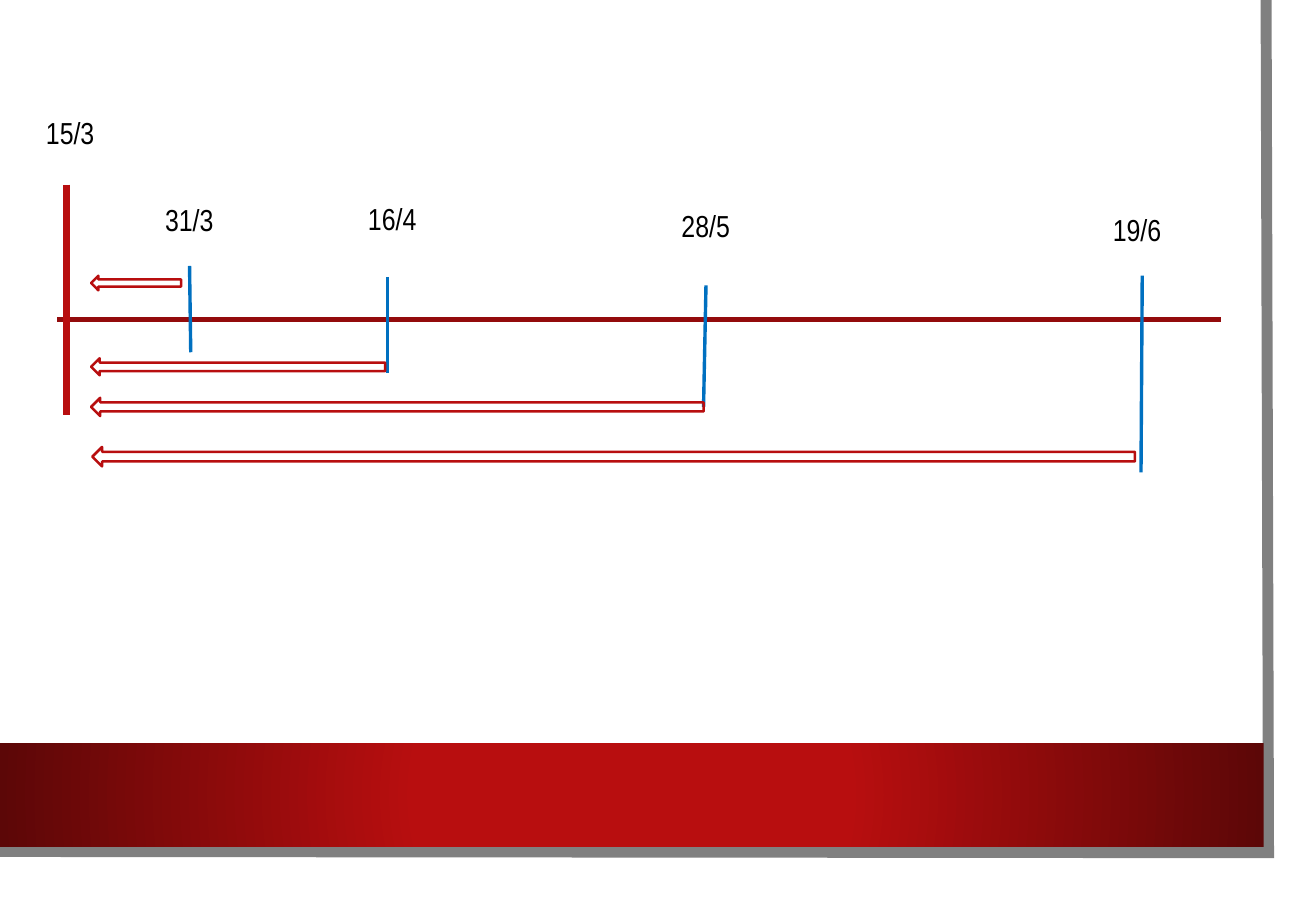
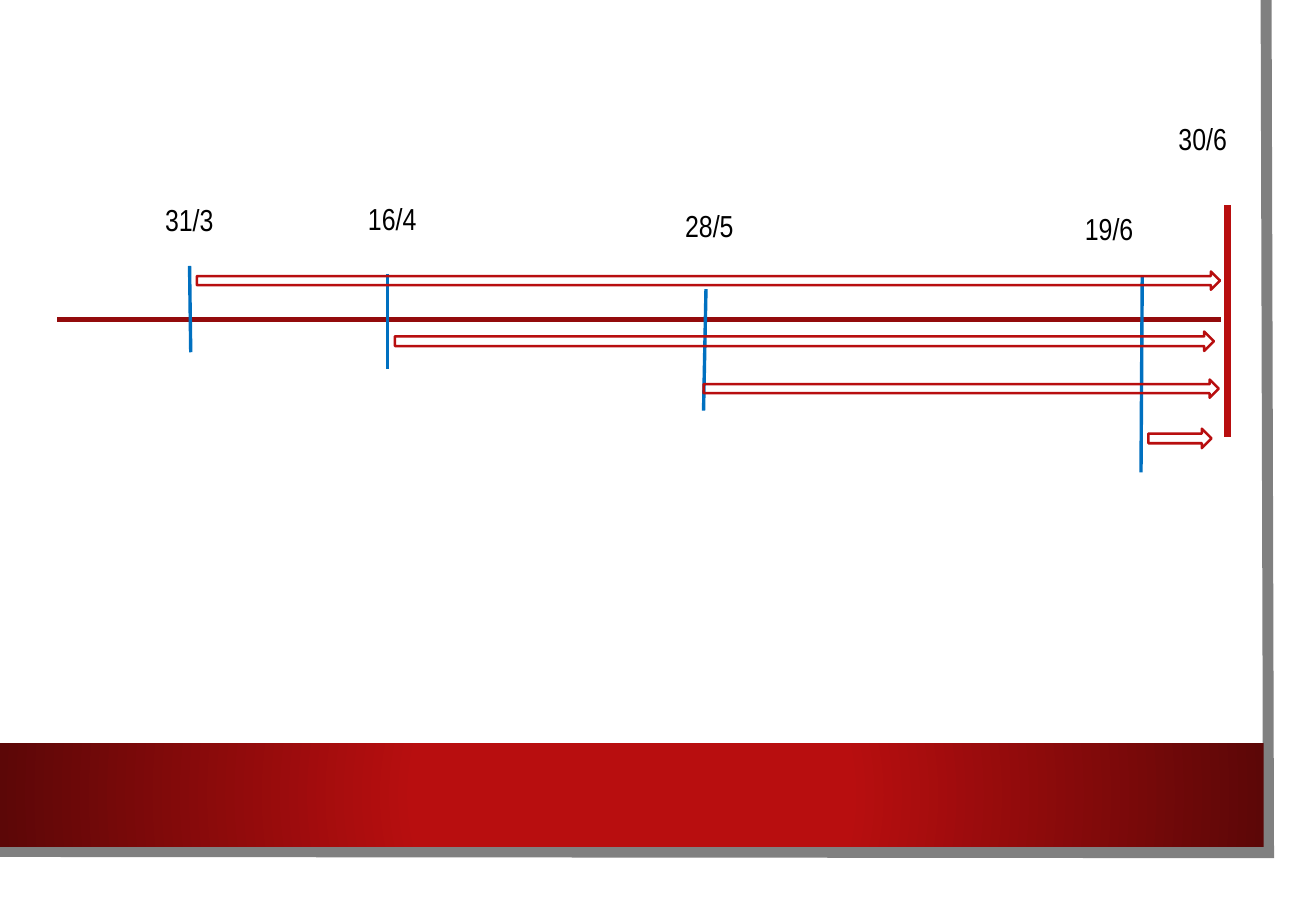
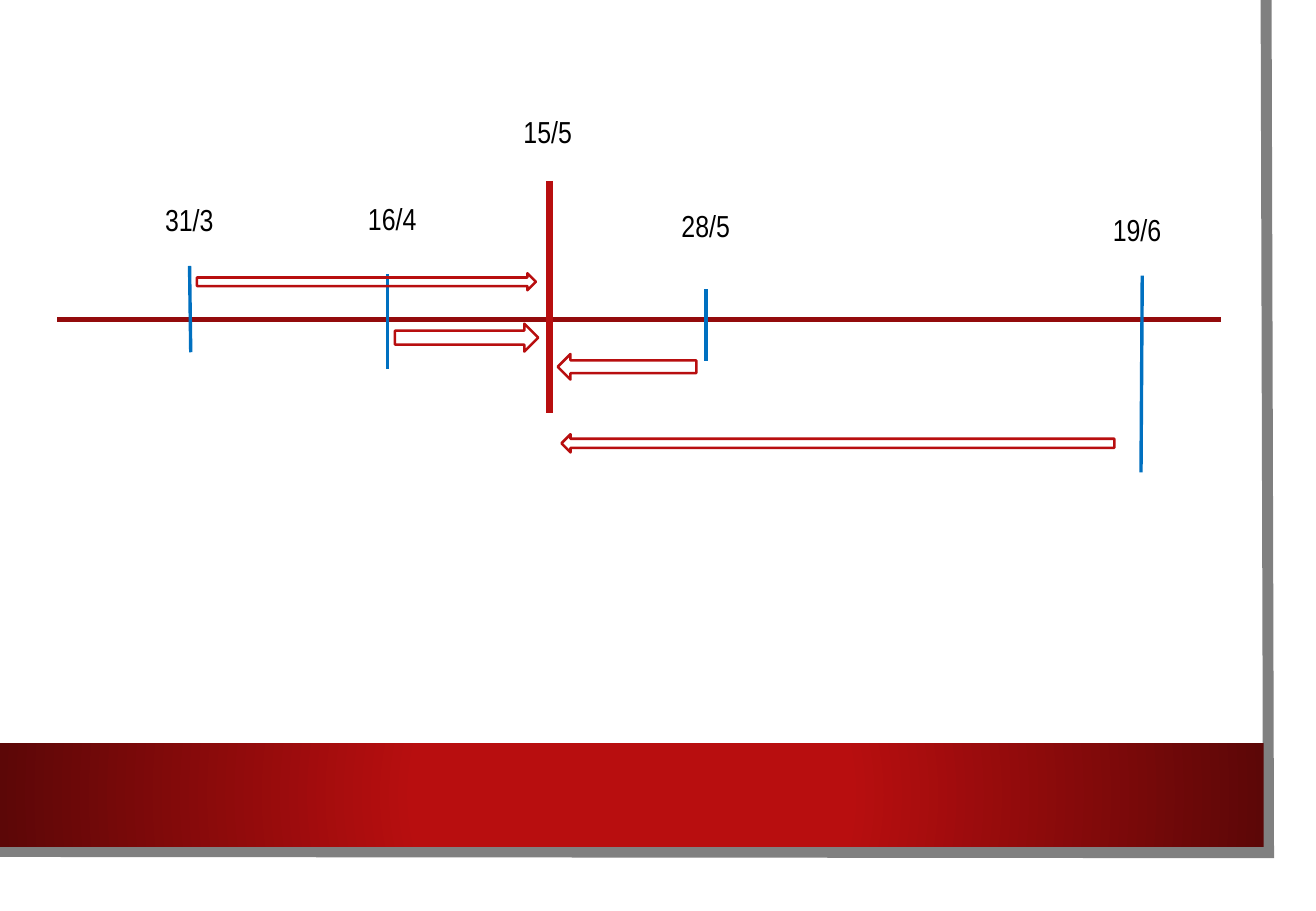
from lxml import etree
from pptx import Presentation
from pptx import util as u
from pptx.dml.color import RGBColor
from pptx.enum import shapes, text
from pptx.oxml import ns

COLORS = {
    "sheet": "FFFFFF",
    "edge": "808080",
    "band": "B80E0F",
    "band_end": "5C0707",
    "axis": "930B0C",
    "event": "0070C0",
    "key": "B80E0F",
    "text": "000000",
}
LABEL_FONT = {"name": "Arial Narrow", "size": u.Pt(18)}
LABEL_SIZE = (0.84, 0.4)
FRAME_BOX = (0, 0, 10.64, 7.27)
TIMELINE_BOX = (0.47, 0.88, 9.58, 3.01)
AXIS_Y = 1.75

# All timeline positions are in inches from the top left of its box.
# Dates: label left and top, then the line's start and end points.
EVENTS = {
    "31/3": {"label": (0.79, 0.73), "line": (1.09, 1.31, 1.10, 2.02)},
    "16/4": {"label": (2.46, 0.72), "line": (2.72, 1.38, 2.72, 2.16)},
    "28/5": {"label": (5.04, 0.78), "line": (5.34, 1.50, 5.32, 2.50)},
    "19/6": {"label": (8.59, 0.81), "line": (8.93, 1.39, 8.92, 3.01)},
}
# Arrows: start x, tip x, middle y, thickness.
TIMELINES = [
    {
        "changes": {
            "16/4": {"line": (2.72, 1.40, 2.72, 2.19)},
            "28/5": {"line": (5.34, 1.47, 5.32, 2.47)},
        },
        "key": ("15/3", {"label": (-0.19, 0.01), "line": (0.08, 0.64, 0.08, 2.54)}),
        "arrows": [
            (1.02, 0.28, 1.45, 0.12),
            (2.70, 0.28, 2.14, 0.14),
            (5.32, 0.28, 2.47, 0.15),
            (8.87, 0.29, 2.88, 0.16),
        ],
    },
    {
        "changes": {
            "28/5": {"label": (5.07, 0.78)},
            "19/6": {"label": (8.36, 0.80)},
        },
        "key": ("30/6", {"label": (9.13, 0.06), "line": (9.63, 0.81, 9.63, 2.72)}),
        "arrows": [
            (1.15, 9.57, 1.43, 0.15),
            (2.78, 9.52, 1.93, 0.16),
            (5.32, 9.56, 2.32, 0.15),
            (8.98, 9.50, 2.73, 0.16),
        ],
    },
    {
        "changes": {"28/5": {"line": (5.34, 1.50, 5.34, 2.09)}},
        "key": ("15/5", {"label": (3.74, 0), "line": (4.05, 0.61, 4.05, 2.52)}),
        "arrows": [
            (1.15, 3.94, 1.44, 0.14),
            (2.78, 3.96, 1.90, 0.23),
            (5.26, 4.12, 2.14, 0.21),
            (8.70, 4.15, 2.77, 0.15),
        ],
    },
]


def color(name):
    return RGBColor.from_string(COLORS[name])


def inches(*lengths):
    return [u.Inches(length) for length in lengths]


def set_line(shape, name, width):
    shape.line.color.rgb = color(name)
    shape.line.width = u.Pt(width)


def add_preset(page, kind, left, top, width, height):
    shape = page.shapes.add_shape(kind, *inches(left, top, width, height))
    shape.shadow.inherit = False
    return shape


def add_line(page, x1, y1, x2, y2, name, width):
    line = page.shapes.add_connector(
        shapes.MSO_CONNECTOR.STRAIGHT, *inches(x1, y1, x2, y2))
    set_line(line, name, width)
    etree.SubElement(line._element.spPr, ns.qn("a:effectLst"))


def add_label(page, left, top, words):
    box = page.shapes.add_textbox(*inches(left, top, *LABEL_SIZE))
    frame = box.text_frame
    frame.word_wrap = True
    frame.auto_size = text.MSO_AUTO_SIZE.SHAPE_TO_FIT_TEXT
    span = frame.paragraphs[0].add_run()
    span.text = words
    for key, value in LABEL_FONT.items():
        setattr(span.font, key, value)
    span.font.color.rgb = color("text")


def add_arrow(page, start, tip, middle, thickness):
    """Draw an outlined block arrow whose head is at tip."""
    kinds = shapes.MSO_SHAPE
    kind = kinds.LEFT_ARROW if tip < start else kinds.RIGHT_ARROW
    arrow = add_preset(page, kind, min(start, tip), middle - thickness / 2,
                       abs(tip - start), thickness)
    arrow.fill.background()
    set_line(arrow, "key", 1.5)


def fill_from_center(shape, stops):
    """Fill a shape with a circular gradient of (position, colour) stops."""
    shape.fill.gradient()
    for stop, (position, name) in zip(shape.fill.gradient_stops, stops):
        stop.position = position
        stop.color.rgb = color(name)
    gradient = shape._element.spPr.find(ns.qn("a:gradFill"))
    gradient.remove(gradient.find(ns.qn("a:lin")))
    circle = etree.SubElement(gradient, ns.qn("a:path"), {"path": "circle"})
    etree.SubElement(circle, ns.qn("a:fillToRect"),
                     dict.fromkeys("ltrb", "50000"))


def add_frame(page, left, top, width, height):
    """Draw the sheet, its grey edge and the red band at the foot."""
    sheet = add_preset(page, shapes.MSO_SHAPE.RECTANGLE, left, top, width, height)
    sheet.fill.solid()
    sheet.fill.fore_color.rgb = color("sheet")
    sheet.line.fill.background()

    right, bottom = left + width - 0.2, top + height - 0.25
    corners = [(right - 0.02, top), (right, bottom), (left - 0.02, bottom - 0.01)]
    points = [inches(*corner) for corner in corners]
    builder = page.shapes.build_freeform(*points[0])
    builder.add_line_segments(points[1:], close=False)
    edge = builder.convert_to_shape()
    edge.shadow.inherit = False
    edge.fill.background()
    set_line(edge, "edge", 6.5)
    etree.SubElement(edge.line._get_or_add_ln(), ns.qn("a:miter"), {"lim": "800000"})

    band = add_preset(page, shapes.MSO_SHAPE.RECTANGLE,
                      left, top + height - 1.15, width - 0.24, 0.85)
    fill_from_center(band, [(0.34, "band"), (1, "band_end")])
    band.line.fill.background()


def add_timeline(page, left, top, width, height, changes, key, arrows):
    events = {date: {**event, **changes.get(date, {})}
              for date, event in EVENTS.items()}
    key_date, key_event = key
    marks = [(date, event, "event", 2) for date, event in events.items()]
    marks.append((key_date, key_event, "key", 4))

    axis = top + AXIS_Y
    add_line(page, left, axis, left + width, axis, "axis", 2.5)
    for date, event, name, thickness in marks:
        x1, y1, x2, y2 = event["line"]
        add_line(page, left + x1, top + y1, left + x2, top + y2, name, thickness)
    for date, event, name, thickness in marks:
        x, y = event["label"]
        add_label(page, left + x, top + y, date)
    for start, tip, middle, thickness in arrows:
        add_arrow(page, left + start, left + tip, top + middle, thickness)


def main():
    deck = Presentation()
    deck.slide_width, deck.slide_height = inches(10.83, 7.5)
    for timeline in TIMELINES:
        page = deck.slides.add_slide(deck.slide_layouts[6])
        add_frame(page, *FRAME_BOX)
        add_timeline(page, *TIMELINE_BOX, **timeline)
    deck.save("out.pptx")


if __name__ == "__main__":
    main()
